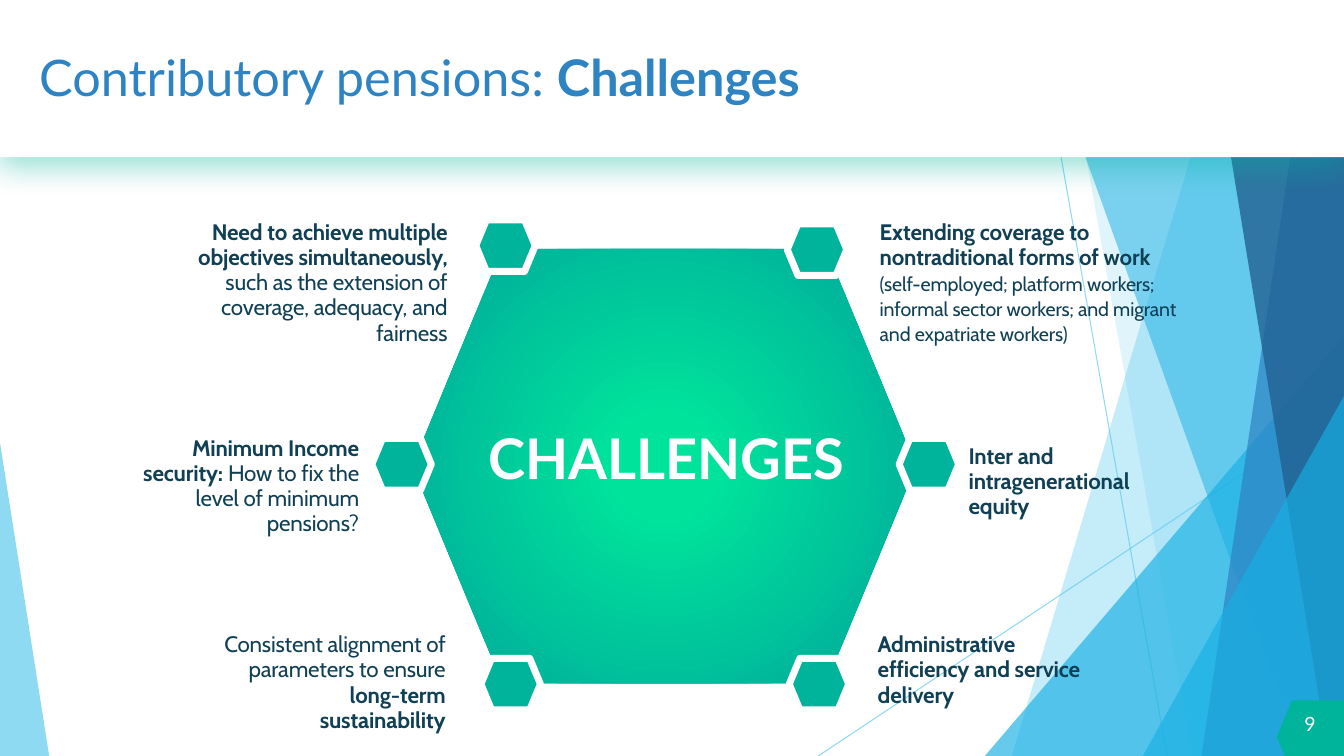
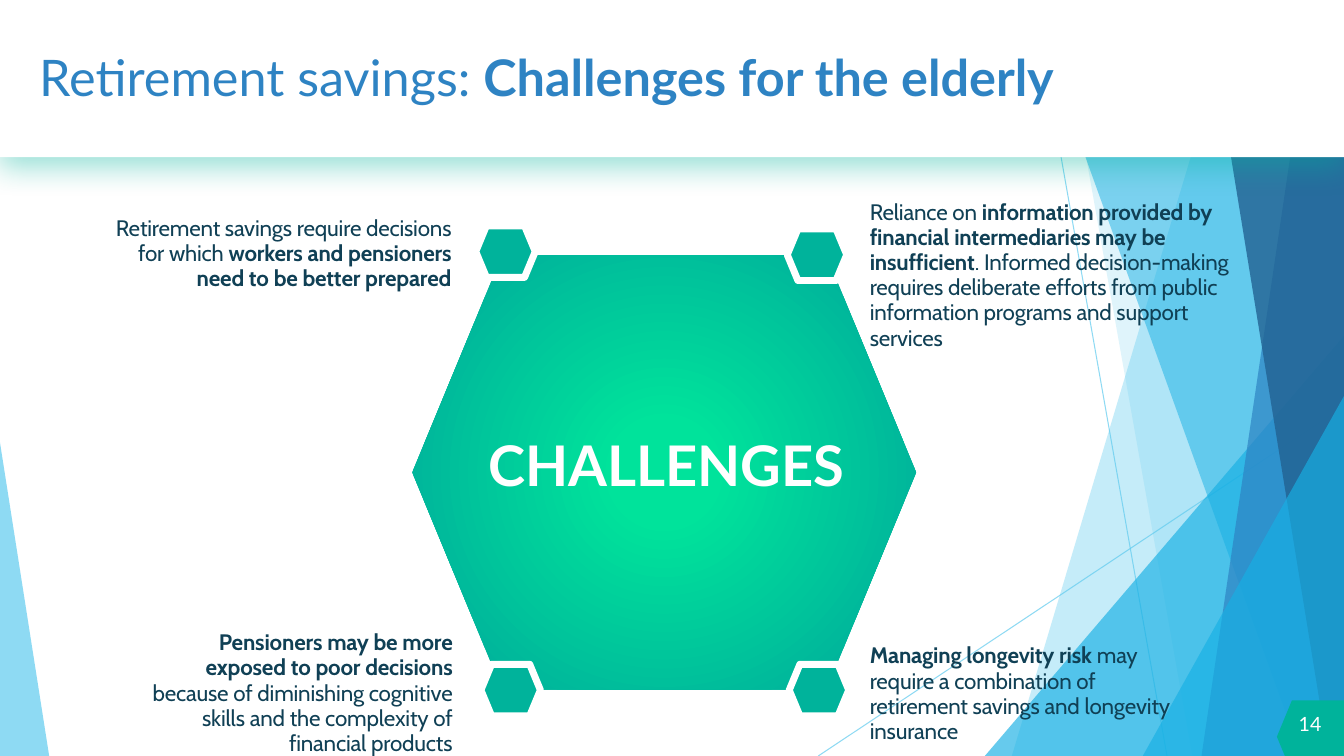
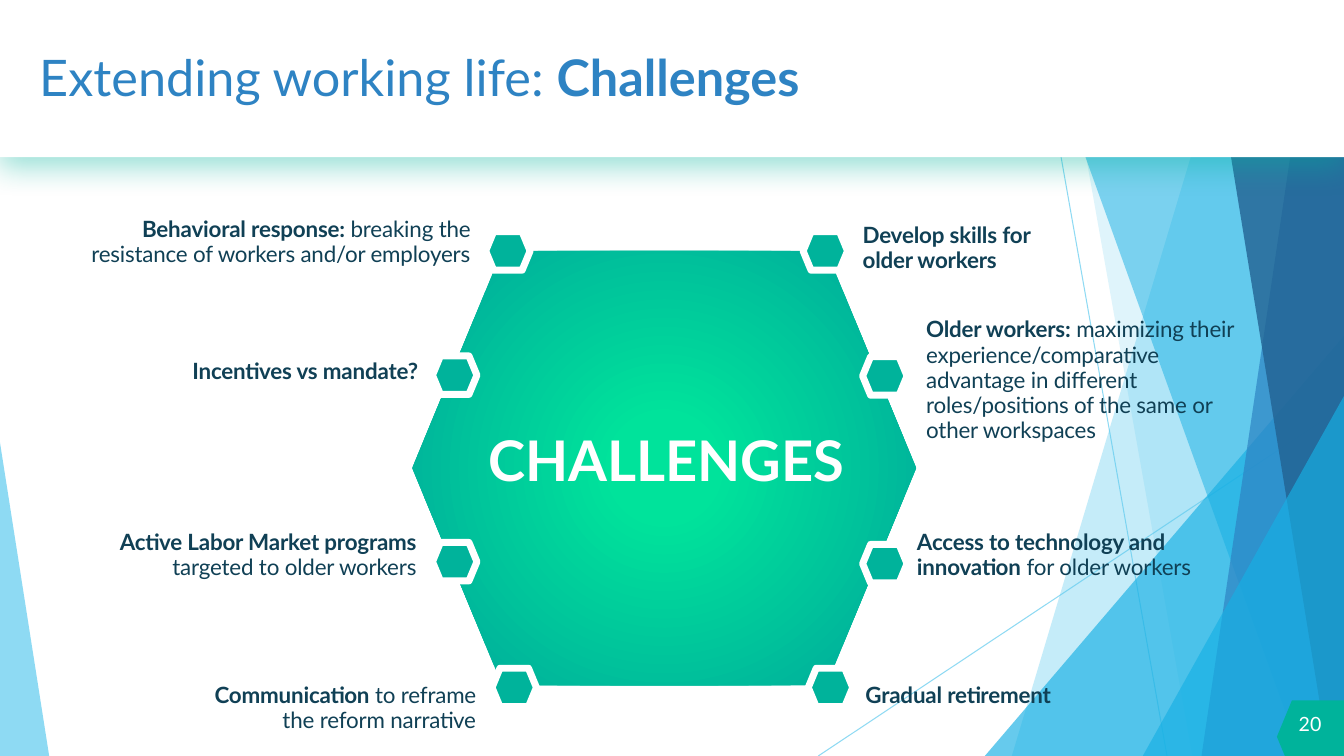
from lxml.etree import SubElement
from pptx import Presentation
from pptx.dml.color import RGBColor
from pptx.enum.shapes import MSO_CONNECTOR, MSO_SHAPE
from pptx.enum.text import MSO_ANCHOR, MSO_AUTO_SIZE, PP_ALIGN
from pptx.oxml.ns import qn
from pptx.util import Cm, Pt

HUES = {
    "sky": "5FCBEF",
    "azure": "17B0E4",
    "blue": "2E83C3",
    "navy": "226292",
    "teal": "00B39B",
    "mint": "00E39B",
    "ink": "104055",
    "white": "FFFFFF",
}
RGB = {name: RGBColor.from_string(code) for name, code in HUES.items()}
WIDE, HIGH = 33.87, 19.05
HEX = 0.207


def paint(shape, hue, alpha=100):
    shape.shadow.inherit = False
    shape.fill.solid()
    shape.fill.fore_color.rgb = RGB[hue]
    shape.line.fill.background()
    if alpha < 100:
        tint = shape.element.xpath(".//a:srgbClr")[0]
        SubElement(tint, qn("a:alpha")).set("val", str(alpha * 1000))
    return shape


def write(page, box, text, font, sizes, hue, align=PP_ALIGN.LEFT):
    frame = page.shapes.add_textbox(*map(Cm, box)).text_frame
    frame.word_wrap = True
    for at, (line, size) in enumerate(zip(text.split("\n"), sizes)):
        para = frame.add_paragraph() if at else frame.paragraphs[0]
        para.alignment = align
        for turn, part in enumerate(line.split("*")):
            if part:
                run = para.add_run()
                run.text = part
                run.font.name = font
                run.font.size = Pt(size)
                run.font.bold = turn % 2 == 1
                run.font.color.rgb = RGB[hue]
    return frame


deck = Presentation()
deck.slide_width, deck.slide_height = Cm(WIDE), Cm(HIGH)
blank = deck.slide_layouts[6]
for holder in list(blank.placeholders):
    holder.element.getparent().remove(holder.element)

rays = [(26.04, 0, 29.41, HIGH), (WIDE, 10.24, 20.62, HIGH)]
fans = [
    ("sky", 36, (31.19, 25.5)),
    ("sky", 20, (26.67, 30.05)),
    ("azure", 66, (24.82, 8.46, 9.05, 10.59, 1)),
    ("azure", 50, (25.93, 32.79)),
    ("blue", 70, (33.1, 30.28)),
    ("navy", 80, (30.38, 33.48)),
    ("azure", 66, (28.8, 9.98, 5.07, 9.07, 1)),
    ("sky", 70, (0, 11.15, 1.24, 7.9, 0)),
]

first = deck.slides.add_slide(blank)
for ray in rays:
    line = first.shapes.add_connector(MSO_CONNECTOR.STRAIGHT, *map(Cm, ray))
    line.line.color.rgb = RGB["sky"]
    line.line.width = Pt(0.75)
    tint = line.element.xpath(".//a:srgbClr")[0]
    SubElement(tint, qn("a:alpha")).set("val", "70000")
    SubElement(line.element.spPr, qn("a:effectLst"))

for hue, alpha, form in fans:
    if len(form) == 2:
        top, base = form
        pen = first.shapes.build_freeform(Cm(top), 0)
        ends = [(WIDE, 0), (WIDE, HIGH), (base, HIGH)]
        pen.add_line_segments([(Cm(x), Cm(y)) for x, y in ends])
        fan = pen.convert_to_shape()
    else:
        fan = first.shapes.add_shape(MSO_SHAPE.ISOSCELES_TRIANGLE, *map(Cm, form[:4]))
        fan.adjustments[0] = form[4]
    paint(fan, hue, alpha)

band = first.shapes.add_shape(MSO_SHAPE.RECTANGLE, 0, Cm(-0.08), Cm(WIDE), Cm(4.04))
paint(band, "white")
glow = SubElement(band.element.spPr.find(qn("a:effectLst")), qn("a:outerShdw"))
for key, val in [("blurRad", Pt(22.4)), ("dist", Pt(6.9)), ("dir", 5400000),
                 ("algn", "t"), ("rotWithShape", 0)]:
    glow.set(key, str(int(val)) if key != "algn" else val)
tint = SubElement(glow, qn("a:srgbClr"))
tint.set("val", HUES["teal"])
SubElement(tint, qn("a:alpha")).set("val", "40000")

badge = first.shapes.add_shape(MSO_SHAPE.HEXAGON, Cm(32.18), Cm(17.65), Cm(2.11), Cm(1.83))
badge.adjustments[0] = HEX
paint(badge, "teal")

for shape in list(first.shapes):
    blank.shapes.element.append(shape.element)

pages = [
    {
        "title": "Contributory pensions: *Challenges*",
        "num": "9",
        "font": "Cabin",
        "top": 6.27,
        "dot": (1.5, 1.3),
        "dots": [(11.99, 5.54), (19.84, 5.64), (12.12, 16.59),
                 (19.89, 16.59), (22.66, 11.05), (9.37, 11.05)],
        "notes": [
            (21.92, 5.41, 8.66, 5, "*Extending coverage to nontraditional forms of work*\n"
             "(self-employed; platform workers; informal sector workers; "
             "and migrant and expatriate workers)"),
            (21.87, 15.8, 5.87, 3, "*Administrative efficiency and service delivery*"),
            (24.16, 11.05, 5.11, 3, "*Inter and intragenerational equity*"),
            (3.66, 5.41, 7.87, 4, "*Need to achieve multiple objectives simultaneously, *"
             "such as the extension of coverage, adequacy, and fairness"),
            (2.57, 10.85, 6.73, 3, "*Minimum Income security:* "
             "How to fix the level of minimum pensions?"),
            (5.36, 15.8, 6.12, 3, "Consistent alignment of parameters to ensure "
             "*long-term sustainability*"),
        ],
    },
    {
        "title": "Retirement savings: *Challenges for the elderly*",
        "num": "14",
        "font": "Cabin",
        "top": 6.43,
        "dot": (1.5, 1.3),
        "dots": [(11.99, 5.69), (19.84, 5.77), (12.12, 16.74), (19.89, 16.74)],
        "notes": [
            (21.67, 4.9, 10.26, 5, "Reliance on *information provided by financial "
             "intermediaries may be insufficient*. Informed decision-making requires "
             "deliberate efforts from public information programs and support services"),
            (21.67, 16.08, 8.71, 3, "*Managing longevity risk *may require a combination "
             "of retirement savings and longevity insurance"),
            (2.59, 5.31, 9.04, 3, "Retirement savings require decisions for which "
             "*workers and pensioners need to be better prepared*"),
            (3.35, 15.75, 8.31, 4, "*Pensioners may be more exposed to poor decisions *"
             "because of diminishing cognitive skills and the complexity "
             "of financial products"),
        ],
    },
    {
        "title": "Extending working life: *Challenges*",
        "num": "20",
        "font": "Lato",
        "top": 6.32,
        "dot": (1.12, 0.97),
        "dots": [(12.24, 5.84), (10.9, 8.97), (10.9, 13.67), (12.4, 16.84),
                 (20.37, 16.84), (21.74, 13.72), (21.74, 8.99), (20.24, 5.84)],
        "notes": [
            (21.49, 5.49, 5.5, 2, "*Develop skills for older workers*"),
            (21.56, 17.07, 5.87, 1, "*Gradual retirement*"),
            (23.09, 7.87, 8.69, 5, "*Older workers: *maximizing their "
             "experience/comparative advantage in different roles/positions "
             "of the same or other workspaces"),
            (1.75, 5.33, 10.36, 2, "*Behavioral response: *breaking the resistance "
             "of workers and/or employers"),
            (4.06, 8.92, 6.73, 1, "*Incentives vs mandate?*"),
            (4.83, 17.07, 7.42, 2, "*Communication *to reframe the reform narrative"),
            (1.73, 13.23, 9.02, 2, "*Active Labor Market programs *"
             "targeted to older workers"),
            (22.86, 13.23, 7.42, 2, "*Access to technology and innovation* "
             "for older workers"),
        ],
    },
]

for at, data in enumerate(pages):
    page = deck.slides.add_slide(blank) if at else first

    for x, y, wide, rows, text in data["notes"]:
        side = PP_ALIGN.RIGHT if x < 10 else PP_ALIGN.LEFT
        box = (x, y, wide, 0.26 + 0.635 * rows)
        note = write(page, box, text, data["font"], (16, 14), "ink", side)
        note.auto_size = MSO_AUTO_SIZE.SHAPE_TO_FIT_TEXT
        for para in note.paragraphs:
            para.line_spacing = Pt(18)
            for run in para.runs:
                run.font._element.set("spc", "-10")

    hub = page.shapes.add_shape(MSO_SHAPE.HEXAGON, Cm(10.39), Cm(data["top"]), Cm(12.7), Cm(10.95))
    hub.adjustments[0] = HEX
    paint(hub, "teal")
    hub.fill.gradient()
    for stop, hue, spot in zip(hub.fill.gradient_stops, ("mint", "teal"), (0.15, 0.81)):
        stop.color.rgb = RGB[hue]
        stop.position = spot
    grad = hub.element.spPr.find(qn("a:gradFill"))
    grad.remove(grad.find(qn("a:lin")))
    ring = SubElement(grad, qn("a:path"))
    ring.set("path", "circle")
    core = SubElement(ring, qn("a:fillToRect"))
    for edge in "ltrb":
        core.set(edge, "50000")

    for x, y in data["dots"]:
        dot = page.shapes.add_shape(MSO_SHAPE.HEXAGON, *map(Cm, (x, y, *data["dot"])))
        dot.adjustments[0] = HEX
        paint(dot, "teal")
        dot.line.color.rgb = RGB["white"]
        dot.line.width = Pt(5)

    box = (10.95, data["top"] + 4.29, 11.68, 1.95)
    write(page, box, "*CHALLENGES*", "Lato", (40,), "white", PP_ALIGN.CENTER)
    head = write(page, (0.74, 0.64, 27.71, 2.57), data["title"], "Lato", (36,), "blue")
    head.vertical_anchor = MSO_ANCHOR.MIDDLE
    write(page, (32.38, 17.81, 1.27, 1.02), data["num"], "Lato", (14,), "white", PP_ALIGN.CENTER)

deck.save("out.pptx")
